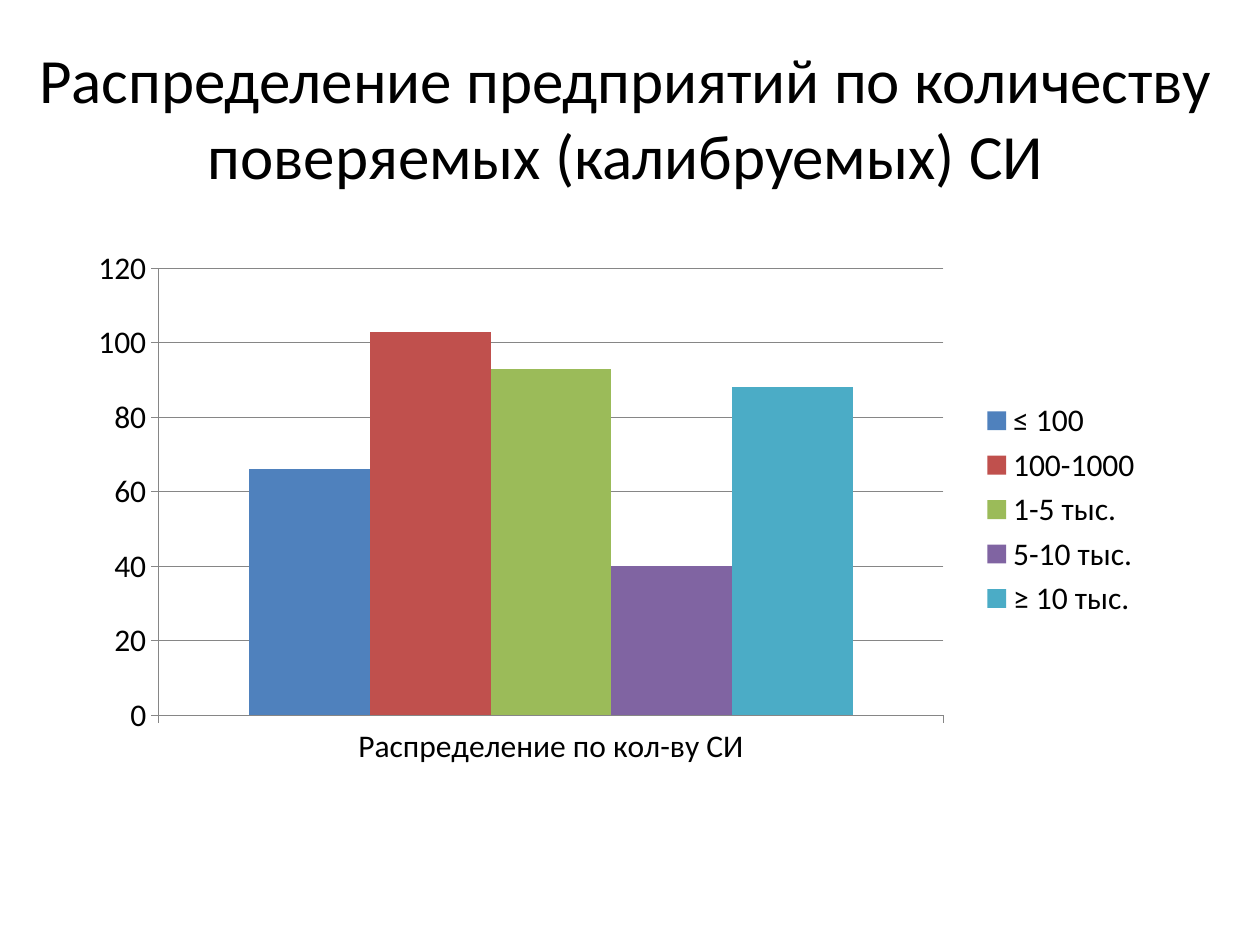
from lxml import etree
from pptx import Presentation, util as u
from pptx.chart.data import CategoryChartData
from pptx.dml.color import RGBColor
from pptx.enum import chart as charts, text
from pptx.oxml.ns import qn

COLORS = {
    "text": "000000",
    "axis": "868686",
    "≤ 100": "4F81BD",
    "100-1000": "C0504D",
    "1-5 тыс.": "9BBB59",
    "5-10 тыс.": "8064A2",
    "≥ 10 тыс.": "4BACC6",
}
COUNTS = {"≤ 100": 66, "100-1000": 103, "1-5 тыс.": 93, "5-10 тыс.": 40, "≥ 10 тыс.": 88}
PLOT_LAYOUT = {
    "layoutTarget": "inner", "xMode": "edge", "yMode": "edge",
    "x": 0.078, "y": 0.045, "w": 0.726, "h": 0.843,
}


def set_font(font, size):
    for name, value in {"name": "Calibri", "size": u.Pt(size), "bold": False}.items():
        setattr(font, name, value)
    font.color.rgb = RGBColor.from_string(COLORS["text"])


deck = Presentation()
deck.slide_width, deck.slide_height = u.Inches(10), u.Inches(7.5)
page = deck.slides.add_slide(deck.slide_layouts[5])

# Title
title = page.shapes.title
title.left, title.top = u.Inches(0.2), u.Inches(0.3)
title.width, title.height = u.Inches(9.53), u.Inches(1.25)
frame = title.text_frame
frame.word_wrap = True
frame.auto_size = text.MSO_AUTO_SIZE.NONE
frame.vertical_anchor = text.MSO_ANCHOR.MIDDLE
para = frame.paragraphs[0]
para.alignment = text.PP_ALIGN.CENTER
span = para.add_run()
span.text = "Распределение предприятий по количеству поверяемых (калибруемых) СИ"
set_font(span.font, 36)

# Column chart: one series per range of instrument counts
data = CategoryChartData()
data.categories = ["Распределение по кол-ву СИ"]
for label, count in COUNTS.items():
    data.add_series(label, [count])
chart = page.shapes.add_chart(
    charts.XL_CHART_TYPE.COLUMN_CLUSTERED,
    u.Inches(0.59), u.Inches(1.94), u.Inches(8.58), u.Inches(4.21), data,
).chart
set_font(chart.font, 18)
chart.has_title = False

plot = chart.plots[0]
plot.gap_width, plot.overlap, plot.vary_by_categories = 150, 0, False
for series in plot.series:
    series.format.fill.solid()
    series.format.fill.fore_color.rgb = RGBColor.from_string(COLORS[series.name])

# Axes and gridlines
chart.value_axis.has_major_gridlines = True
chart.value_axis.minimum_scale, chart.value_axis.maximum_scale = 0, 120
chart.value_axis.major_unit = 20
for axis in (chart.category_axis, chart.value_axis):
    axis.major_tick_mark = charts.XL_TICK_MARK.OUTSIDE
    axis.minor_tick_mark = charts.XL_TICK_MARK.NONE
for part in (chart.category_axis, chart.value_axis, chart.value_axis.major_gridlines):
    part.format.line.width = u.Pt(0.75)
    part.format.line.color.rgb = RGBColor.from_string(COLORS["axis"])

# Legend
chart.has_legend = True
chart.legend.position = charts.XL_LEGEND_POSITION.RIGHT
chart.legend.include_in_layout = False

# Fixed position of the inner plot area
plot_area = chart._chartSpace.chart.plotArea
for old_layout in plot_area.findall(qn("c:layout")):
    plot_area.remove(old_layout)
layout = etree.Element(qn("c:layout"))
manual = etree.SubElement(layout, qn("c:manualLayout"))
for tag, value in PLOT_LAYOUT.items():
    etree.SubElement(manual, qn(f"c:{tag}")).set("val", str(value))
plot_area.insert(0, layout)

deck.save("out.pptx")
